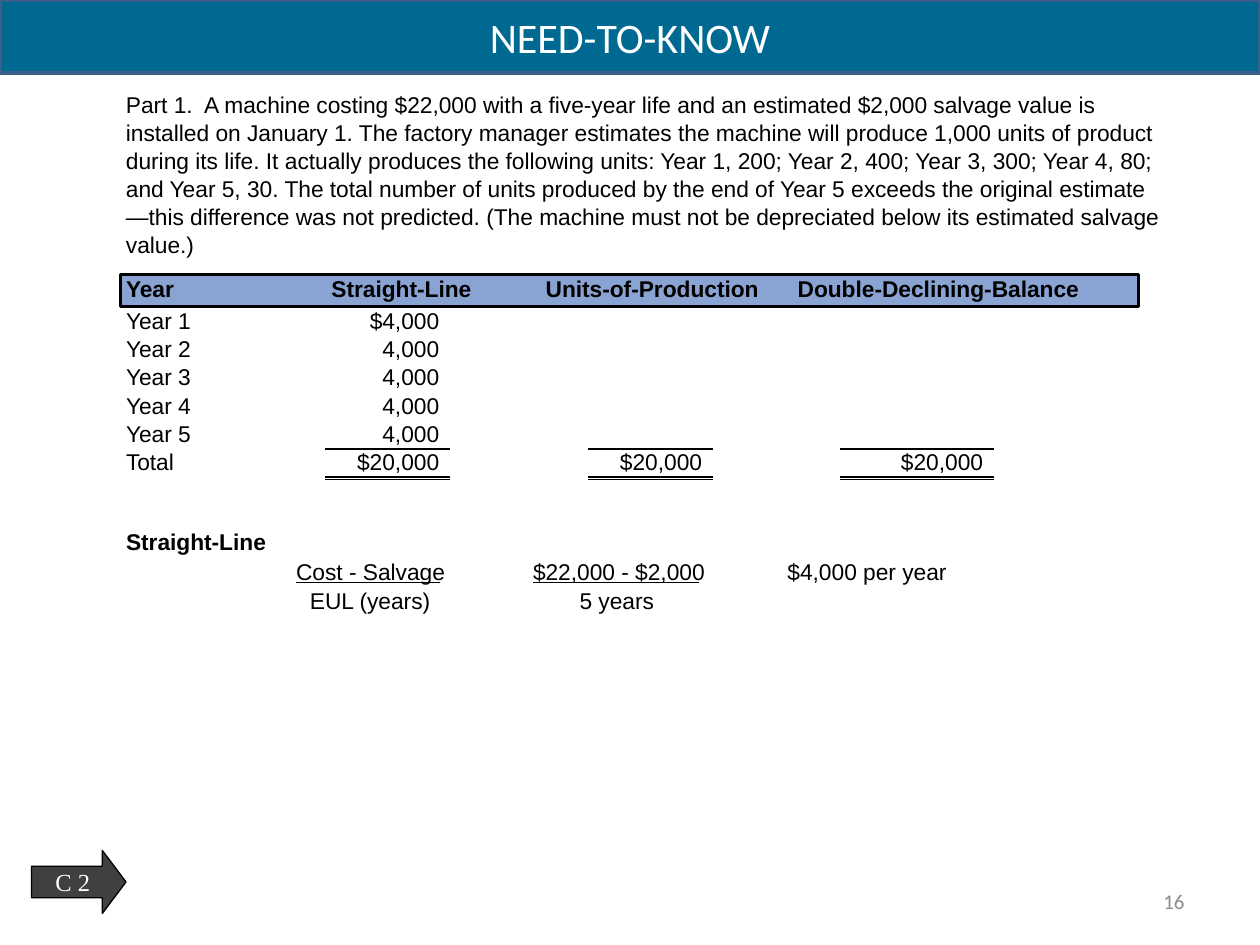
from dataclasses import dataclass
from typing import NamedTuple

from lxml import etree
from pptx import Presentation
from pptx.dml.color import RGBColor
from pptx.enum.shapes import MSO_CONNECTOR as Connector, MSO_SHAPE as Shape
from pptx.enum.text import MSO_ANCHOR as Anchor, PP_ALIGN as Align
from pptx.oxml.ns import qn
from pptx.util import Pt


@dataclass(frozen=True)
class Theme:
    banner: RGBColor = RGBColor(0x00, 0x69, 0x91)
    banner_line: RGBColor = RGBColor(0x3A, 0x5F, 0x8C)
    header: RGBColor = RGBColor(0x89, 0xA3, 0xD3)
    badge: RGBColor = RGBColor(0x40, 0x40, 0x40)
    black: RGBColor = RGBColor(0, 0, 0)
    white: RGBColor = RGBColor(0xFF, 0xFF, 0xFF)
    gray: RGBColor = RGBColor(0x8C, 0x8C, 0x8C)
    body_font: str = "Arial"
    title_font: str = "Calibri"
    badge_font: str = "Times New Roman"
    title_size: float = 24
    badge_size: float = 14
    body_size: float = 13
    number_size: float = 12


class Box(NamedTuple):
    left: float
    top: float
    width: float
    height: float

    def lengths(self) -> tuple:
        return tuple(Pt(value) for value in self)


class Column(NamedTuple):
    heading: str
    width: float
    figures: tuple
    right_margin: float = 0


class Rule(NamedTuple):
    left: float
    width: float


class Label(NamedTuple):
    text: str
    box: Box
    bold: bool = False


THEME = Theme()
NO_GRID_STYLE = "{2D5ABB26-0587-4C30-8999-92F81FD0307C}"
PROBLEM = (
    "Part 1.  A machine costing $22,000 with a five-year life and an estimated $2,000 "
    "salvage value is installed on January 1. The factory manager estimates the machine "
    "will produce 1,000 units of product during its life. It actually produces the "
    "following units: Year 1, 200; Year 2, 400; Year 3, 300; Year 4, 80; and Year 5, 30. "
    "The total number of units produced by the end of Year 5 exceeds the original "
    "estimate—this difference was not predicted. (The machine must not be depreciated "
    "below its estimated salvage value.)"
)
YEARS = tuple(f"Year {year}" for year in range(1, 6))
COLUMNS = (
    Column("Year", 117.4, YEARS + ("Total",)),
    Column("Straight-Line", 122.4, ("$4,000",) + ("4,000",) * 4 + ("$20,000",), 57.3),
    Column("Units-of-Production", 144, ("",) * 5 + ("$20,000",), 51.1),
    Column("Double-Declining-Balance", 198.8, ("",) * 5 + ("$20,000",), 89.3),
)
TABLE_LEFT, TABLE_TOP = 68.4, 157
HEADER_HEIGHT, ROW_HEIGHT = 19, 16.2
TOTAL_RULES = (Rule(185.8, 71.3), Rule(336.2, 71.3), Rule(480.2, 87.8))
TOTAL_RULE_TOPS = (256.6, 272.6, 274)
FRACTION_RULES = (Rule(169.2, 82.1), Rule(304.6, 95))
FRACTION_RULE_TOP = 333
LABELS = (
    Label("Straight-Line", Box(72, 301.7, 90, 19.4), bold=True),
    Label("Cost - Salvage", Box(169.2, 319, 94.3, 18.7)),
    Label("EUL (years)", Box(177.1, 335.5, 78.5, 18.7)),
    Label("$22,000 - $2,000", Box(304.6, 319, 108, 18.7)),
    Label("5 years", Box(331.2, 335.5, 50.4, 18.7)),
    Label("$4,000 per year", Box(450, 319, 100.8, 18.7)),
)


def style_text(frame, size: float, font: str, color: RGBColor,
               align=Align.LEFT, bold: bool = False) -> None:
    for paragraph in frame.paragraphs:
        paragraph.alignment = align
        paragraph.font.size = Pt(size)
        paragraph.font.name = font
        paragraph.font.bold = bold
        paragraph.font.color.rgb = color


def set_margins(target, left: float = 0, top: float = 0, right: float = 0) -> None:
    target.margin_left, target.margin_top = Pt(left), Pt(top)
    target.margin_right, target.margin_bottom = Pt(right), Pt(0)


def add_body_text(slide, text: str, box: Box, bold: bool = False, wrap: bool = False):
    frame = slide.shapes.add_textbox(*box.lengths()).text_frame
    set_margins(frame)
    frame.word_wrap = wrap
    frame.text = text
    style_text(frame, THEME.body_size, THEME.body_font, THEME.black, bold=bold)
    return frame


def add_rule(slide, rule: Rule, top: float) -> None:
    line = slide.shapes.add_connector(Connector.STRAIGHT, Pt(rule.left), Pt(top),
                                      Pt(rule.left + rule.width), Pt(top))
    line.line.color.rgb = THEME.black
    line.line.width = Pt(0.75)
    etree.SubElement(line._element.spPr, qn("a:effectLst"))


def format_title(slide) -> None:
    title = slide.shapes.title
    title.left, title.top, title.width, title.height = Box(0, 0, 720, 41.8).lengths()
    title.fill.solid()
    title.fill.fore_color.rgb = THEME.banner
    title.line.color.rgb = THEME.banner_line
    title.line.width = Pt(2)
    title.text_frame.text = "NEED-TO-KNOW"
    title.text_frame.vertical_anchor = Anchor.MIDDLE
    style_text(title.text_frame, THEME.title_size, THEME.title_font, THEME.white, Align.CENTER)


def add_depreciation_table(slide) -> None:
    row_count = len(COLUMNS[0].figures)
    width = sum(column.width for column in COLUMNS)
    box = Box(TABLE_LEFT, TABLE_TOP, width, HEADER_HEIGHT + row_count * ROW_HEIGHT)
    table = slide.shapes.add_table(row_count + 1, len(COLUMNS), *box.lengths()).table
    table._tbl.tblPr.find(qn("a:tableStyleId")).text = NO_GRID_STYLE
    table.horz_banding = False
    for index, row in enumerate(table.rows):
        row.height = Pt(ROW_HEIGHT if index else HEADER_HEIGHT)
    for column_index, column in enumerate(COLUMNS):
        table.columns[column_index].width = Pt(column.width)
        for row_index, text in enumerate((column.heading,) + column.figures):
            cell = table.cell(row_index, column_index)
            is_header = row_index == 0
            is_figure = column_index > 0 and not is_header
            cell.text = text
            set_margins(cell, left=3.6, top=1.4 if is_header else 0.4,
                        right=column.right_margin if is_figure else 0)
            style_text(cell.text_frame, THEME.body_size, THEME.body_font, THEME.black,
                       Align.RIGHT if is_figure else Align.LEFT, is_header)
            if is_header:
                cell.fill.solid()
                cell.fill.fore_color.rgb = THEME.header
            else:
                cell.fill.background()
    border = slide.shapes.add_shape(
        Shape.RECTANGLE, *Box(TABLE_LEFT + 0.4, TABLE_TOP, width - 1, 18).lengths())
    border.shadow.inherit = False
    border.fill.background()
    border.line.color.rgb = THEME.black
    border.line.width = Pt(1.75)


def add_badge(slide) -> None:
    badge = slide.shapes.add_shape(Shape.RIGHT_ARROW, *Box(18, 486, 54, 36).lengths())
    badge.adjustments[0], badge.adjustments[1] = 0.5, 0.375
    badge.shadow.inherit = False
    badge.fill.solid()
    badge.fill.fore_color.rgb = THEME.badge
    badge.line.color.rgb = THEME.black
    badge.line.width = Pt(0.75)
    frame = badge.text_frame
    frame.text = "C 2"
    frame.word_wrap = False
    frame.vertical_anchor = Anchor.MIDDLE
    style_text(frame, THEME.badge_size, THEME.badge_font, THEME.white, Align.CENTER)


def add_page_number(slide) -> None:
    frame = slide.shapes.add_textbox(*Box(516, 500.5, 168, 28.8).lengths()).text_frame
    frame.text = "16"
    frame.word_wrap = True
    frame.vertical_anchor = Anchor.MIDDLE
    style_text(frame, THEME.number_size, THEME.title_font, THEME.gray, Align.RIGHT)


def main() -> None:
    presentation = Presentation()
    presentation.slide_width, presentation.slide_height = Pt(720), Pt(540)
    slide = presentation.slides.add_slide(presentation.slide_layouts.get_by_name("Title Only"))
    format_title(slide)
    problem = add_body_text(slide, PROBLEM, Box(72, 51.5, 592.5, 97), wrap=True)
    problem.paragraphs[0].line_spacing = Pt(16)
    add_depreciation_table(slide)
    for top in TOTAL_RULE_TOPS:
        for rule in TOTAL_RULES:
            add_rule(slide, rule, top)
    for label in LABELS:
        add_body_text(slide, label.text, label.box, label.bold)
    for rule in FRACTION_RULES:
        add_rule(slide, rule, FRACTION_RULE_TOP)
    add_badge(slide)
    add_page_number(slide)
    presentation.save("out.pptx")


if __name__ == "__main__":
    main()
